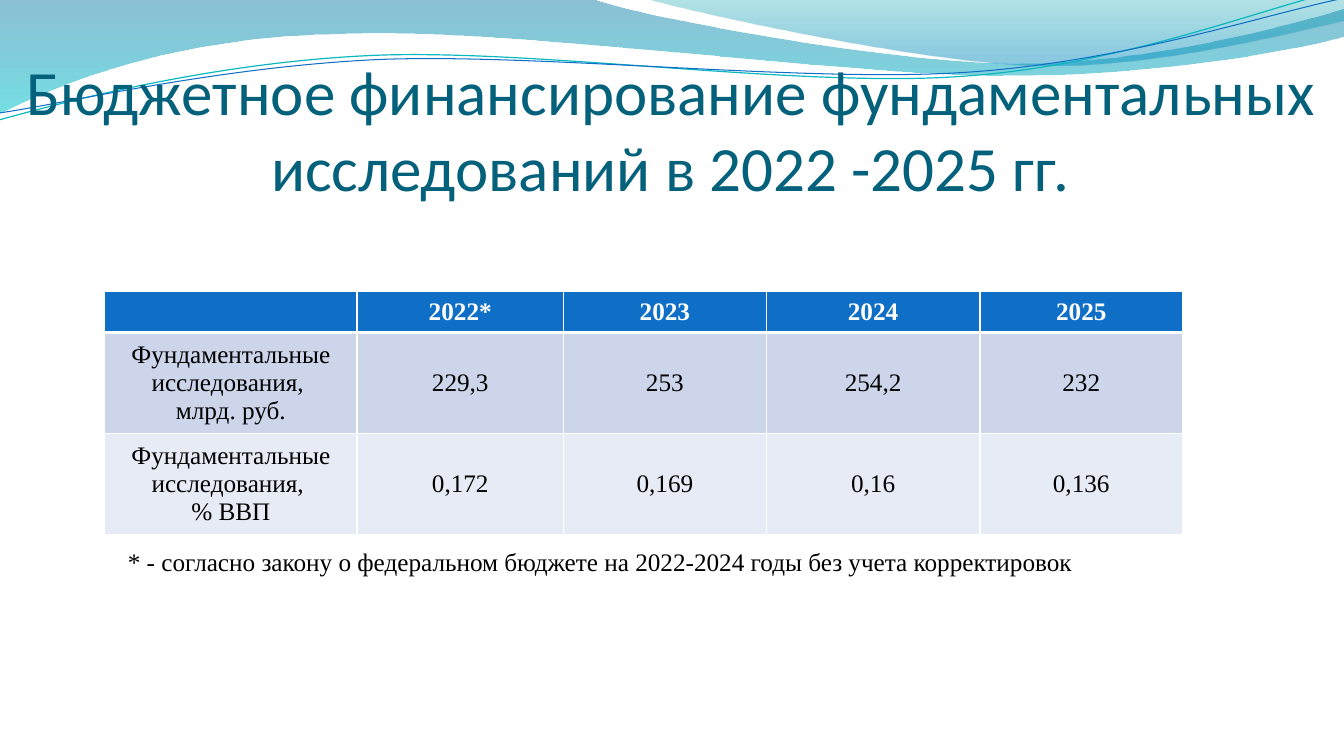
"""Build a slide on budget funding of fundamental research in 2022-2025."""
from dataclasses import dataclass
from typing import Optional

from lxml import etree
from pptx import Presentation
from pptx import util as u
from pptx.dml.color import RGBColor
from pptx.enum import text
from pptx.oxml.ns import qn

Point = tuple[float, float]

WHITE = RGBColor(0xFF, 0xFF, 0xFF)
BLACK = RGBColor(0x00, 0x00, 0x00)
TITLE_TEAL = RGBColor(0x04, 0x61, 0x7B)
HEADER_BLUE = RGBColor(0x0F, 0x6F, 0xC6)
ROW_TINTS = (RGBColor(0xCC, 0xD5, 0xEA), RGBColor(0xE7, 0xEB, 0xF5))
THREAD_TEAL = RGBColor(0x0A, 0xB8, 0xBF)
DEEP_BLUE = RGBColor(0x00, 0x74, 0xA1)
AQUA = RGBColor(0x00, 0xC6, 0xCF)
SEA_GREEN = RGBColor(0x00, 0xA1, 0xA9)
SKY_BLUE = RGBColor(0x00, 0x8B, 0xBF)
SERIF = "Times New Roman"


@dataclass(frozen=True)
class GradientStop:
    """A gradient colour with its position and opacity in percent."""
    position: float
    color: RGBColor
    opacity: int


@dataclass(frozen=True)
class Wave:
    """An outline of lines (2 numbers) and cubic curves (6 numbers)."""
    start: Point
    segments: tuple[tuple[float, ...], ...]
    stops: tuple[GradientStop, ...] = ()
    line_color: Optional[RGBColor] = None
    line_width: float = 0


@dataclass(frozen=True)
class TextStyle:
    """Character and paragraph formatting."""
    font: str
    size: float
    color: RGBColor
    bold: bool = False
    align: text.PP_ALIGN = text.PP_ALIGN.CENTER


WAVES = (
    Wave((0, 0), (
        (5.87, -0.01),
        (6.34, 0.17, 8.85, 0.63, 10.11, 0.63),
        (11.38, 0.63, 12.78, 0.26, 13.33, 0.09),
        (13.35, 0.36),
        (13.11, 0.44, 11.6, 0.76, 9.94, 0.75),
        (8.29, 0.75, 5.09, 0.28, 3.43, 0.34),
        (1.72, 0.36, 0.61, 0.83, -0.01, 1.13),
    ), stops=(GradientStop(0, DEEP_BLUE, 45), GradientStop(1, AQUA, 55))),
    Wave((6.39, -0.01), (
        (6.79, 0.11, 9.09, 0.62, 10.25, 0.65),
        (11.41, 0.69, 12.82, 0.32, 13.33, 0.21),
        (13.33, 0),
    ), stops=(GradientStop(0, SEA_GREEN, 30), GradientStop(0.8, SKY_BLUE, 45))),
    Wave((-0.01, 1.19), (
        (0.64, 1.01, 2.11, 0.62, 3.69, 0.55),
        (5.27, 0.48, 7.9, 0.87, 9.5, 0.76),
        (11.1, 0.66, 12.52, 0.08, 13.31, -0.1),
    ), line_color=THREAD_TEAL, line_width=0.85),
    Wave((0, 1.12), (
        (0.63, 1.03, 2.18, 0.66, 3.78, 0.59),
        (5.37, 0.53, 7.96, 0.82, 9.55, 0.72),
        (11.15, 0.62, 12.55, 0.14, 13.34, -0.02),
    ), line_color=HEADER_BLUE, line_width=0.75),
)

FUNDING = (
    ("", "2022*", "2023", "2024", "2025"),
    ("Фундаментальные исследования, \nмлрд. руб.", "229,3", "253", "254,2", "232"),
    ("Фундаментальные исследования, \n% ВВП", "0,172", "0,169", "0,16", "0,136"),
)
COLUMN_WIDTHS = (2.5, 2.05, 2.01, 2.12, 2.01)
ROW_HEIGHT = 0.41
TABLE_HEIGHT = 2.41


def bend(outline, segments: tuple[tuple[float, ...], ...]) -> None:
    """Merge the three lines of each curved segment into one cubic curve."""
    lines = iter(list(outline.iter(qn("a:lnTo"))))
    for segment in segments:
        parts = [next(lines) for _ in range(len(segment) // 2)]
        if len(parts) == 3:
            curve = etree.Element(qn("a:cubicBezTo"))
            parts[0].addprevious(curve)
            for part in parts:
                curve.append(part[0])
                part.getparent().remove(part)


def draw_wave(slide, wave: Wave) -> None:
    """Draw a gradient band or a thin thread."""
    points = [(u.Inches(x), u.Inches(y)) for segment in wave.segments
              for x, y in zip(segment[0::2], segment[1::2])]
    builder = slide.shapes.build_freeform(*map(u.Inches, wave.start))
    builder.add_line_segments(points, close=bool(wave.stops))
    ribbon = builder.convert_to_shape()
    bend(ribbon._element.spPr, wave.segments)
    ribbon.shadow.inherit = False
    if not wave.stops:
        ribbon.fill.background()
        ribbon.line.color.rgb = wave.line_color
        ribbon.line.width = u.Pt(wave.line_width)
        return
    ribbon.line.fill.background()
    ribbon.fill.gradient()
    ribbon.fill.gradient_angle = 270
    for target, stop in zip(ribbon.fill.gradient_stops, wave.stops):
        target.position = stop.position
        target.color.rgb = stop.color
    for color, stop in zip(ribbon._element.spPr.iter(qn("a:srgbClr")), wave.stops):
        etree.SubElement(color, qn("a:alpha"), val=str(stop.opacity * 1000))


def write(frame, wording: str, style: TextStyle) -> None:
    """Fill a text frame and format its runs."""
    frame.text = wording
    for paragraph in frame.paragraphs:
        paragraph.alignment = style.align
        for run in paragraph.runs:
            run.font.name = style.font
            run.font.size = u.Pt(style.size)
            run.font.bold = style.bold
            run.font.color.rgb = style.color


def add_text(slide, box: tuple[float, ...], wording: str, style: TextStyle):
    """Add a wrapping text box and return its frame."""
    frame = slide.shapes.add_textbox(*map(u.Inches, box)).text_frame
    frame.word_wrap = True
    write(frame, wording, style)
    return frame


def set_borders(cell, top: float, bottom: float) -> None:
    """Give a cell white borders with the given top and bottom widths."""
    properties = cell._tc.get_or_add_tcPr()
    for side, width in (("L", 1), ("R", 1), ("T", top), ("B", bottom)):
        border = etree.SubElement(properties, qn(f"a:ln{side}"), w=str(u.Pt(width)))
        fill = etree.SubElement(border, qn("a:solidFill"))
        etree.SubElement(fill, qn("a:srgbClr"), val=str(WHITE))


def add_funding_table(slide) -> None:
    """Add the table of funding by year."""
    box = (1.04, 2.89, sum(COLUMN_WIDTHS), TABLE_HEIGHT)
    holder = slide.shapes.add_table(
        len(FUNDING), len(COLUMN_WIDTHS), *map(u.Inches, box))
    table = holder.table
    for column, width in zip(table.columns, COLUMN_WIDTHS):
        column.width = u.Inches(width)
    for r, (values, tint) in enumerate(zip(FUNDING, (HEADER_BLUE, *ROW_TINTS))):
        table.rows[r].height = u.Inches(ROW_HEIGHT)
        header = r == 0
        style = TextStyle(SERIF, 18, WHITE if header else BLACK, bold=header)
        for c, value in enumerate(values):
            cell = table.cell(r, c)
            set_borders(cell, top=3 if r == 1 else 1, bottom=3 if header else 1)
            cell.fill.solid()
            cell.fill.fore_color.rgb = tint
            cell.vertical_anchor = text.MSO_ANCHOR.MIDDLE
            write(cell.text_frame, value, style)
    holder.height = u.Inches(TABLE_HEIGHT)


def main() -> None:
    """Assemble and save the slide."""
    deck = Presentation()
    deck.slide_width, deck.slide_height = u.Inches(13.33), u.Inches(7.5)
    slide = deck.slides.add_slide(deck.slide_layouts[6])
    for wave in WAVES:
        draw_wave(slide, wave)
    title = add_text(
        slide, (0.09, 0.3, 13.12, 1.72),
        "Бюджетное финансирование фундаментальных исследований в 2022 -2025 гг.",
        TextStyle("Calibri", 45, TITLE_TEAL))
    title.vertical_anchor = text.MSO_ANCHOR.BOTTOM
    title.margin_left = title.margin_right = title.margin_bottom = 0
    add_funding_table(slide)
    add_text(
        slide, (1.17, 5.37, 10.8, 0.4),
        "* - согласно закону о федеральном бюджете на 2022-2024 годы без учета корректировок",
        TextStyle(SERIF, 18, BLACK, align=text.PP_ALIGN.LEFT))
    deck.save("out.pptx")


if __name__ == "__main__":
    main()
